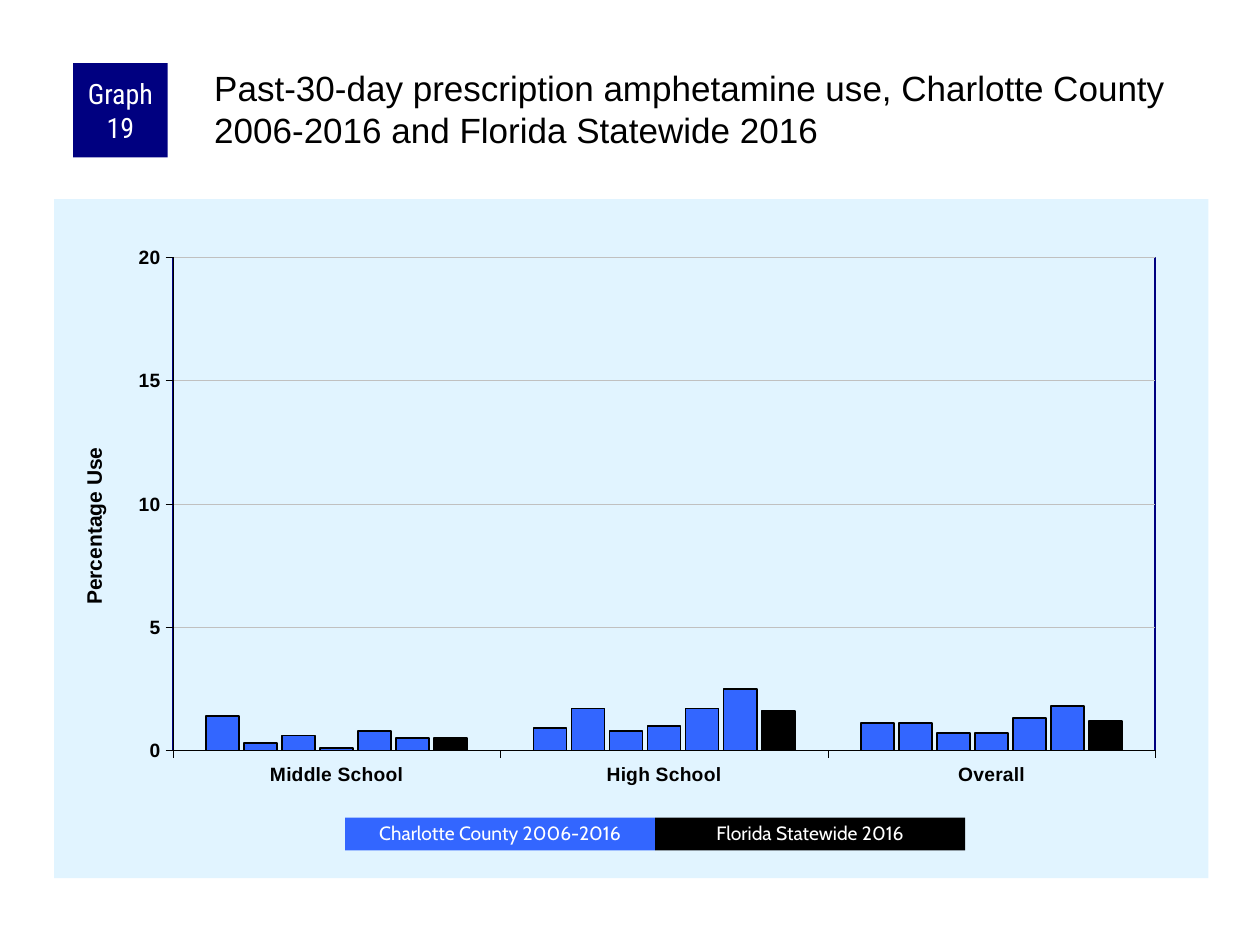
from lxml.etree import SubElement
from pptx import Presentation
from pptx.chart.data import CategoryChartData
from pptx.dml.color import RGBColor
from pptx.enum.chart import XL_CHART_TYPE, XL_TICK_MARK
from pptx.enum.shapes import MSO_SHAPE
from pptx.enum.text import MSO_ANCHOR, PP_ALIGN
from pptx.oxml import parse_xml
from pptx.oxml.ns import nsdecls, qn
from pptx.util import Inches, Pt

BLACK = RGBColor(0x00, 0x00, 0x00)
WHITE = RGBColor(0xFF, 0xFF, 0xFF)
NAVY = RGBColor(0x00, 0x00, 0x80)
BLUE = RGBColor(0x33, 0x66, 0xFF)
PALE = RGBColor(0xE1, 0xF4, 0xFF)
GREY = RGBColor(0xC0, 0xC0, 0xC0)

SCHOOLS = ["Middle School", "High School", "Overall"]
COUNTY_USE = [
    (1.4, 0.9, 1.1),
    (0.3, 1.7, 1.1),
    (0.6, 0.8, 0.7),
    (0.1, 1, 0.7),
    (0.8, 1.7, 1.3),
    (0.5, 2.5, 1.8),
]
STATE_USE = (0.5, 1.6, 1.2)


def style_font(font, name, size, color, bold=False):
    """Set the face, size, colour and weight of a font."""
    font.name = name
    font.size = Pt(size)
    font.color.rgb = color
    font.bold = bold


def style_line(line, color, width):
    """Give a line a solid colour and a width in points."""
    line.color.rgb = color
    line.width = Pt(width)


def add_label(slide, box, text, fill, font_name, size, spacing=1.0):
    """Place a filled rectangle with centred white text."""
    label = slide.shapes.add_shape(MSO_SHAPE.RECTANGLE, *map(Inches, box))
    label.shadow.inherit = False
    label.fill.solid()
    label.fill.fore_color.rgb = fill
    label.line.fill.background()
    frame = label.text_frame
    frame.word_wrap = True
    frame.vertical_anchor = MSO_ANCHOR.MIDDLE
    frame.margin_left = frame.margin_right = Inches(0.05)
    frame.margin_top = frame.margin_bottom = 0
    para = frame.paragraphs[0]
    para.alignment = PP_ALIGN.CENTER
    para.line_spacing = spacing
    span = para.add_run()
    span.text = text
    style_font(span.font, font_name, size, WHITE)


def add_header(slide, left, top, width):
    """Place the graph number and the heading beside it."""
    add_label(slide, (left, top, 0.75, 0.75), "Graph 19", NAVY, "Roboto Condensed", 16)
    indent = 1.09
    heading = slide.shapes.add_textbox(
        Inches(left + indent), Inches(top), Inches(width - indent), Inches(0.83)
    )
    frame = heading.text_frame
    frame.word_wrap = True
    frame.margin_left = frame.margin_top = Inches(0.03)
    frame.margin_right = frame.margin_bottom = 0
    span = frame.paragraphs[0].add_run()
    span.text = (
        "Past-30-day prescription amphetamine use, Charlotte County "
        "2006-2016 and Florida Statewide 2016"
    )
    style_font(span.font, "Arial", 20, BLACK)


def make_layout(**values):
    """Build a manual chart layout from fractions of the chart."""
    layout = parse_xml(f"<c:layout {nsdecls('c')}><c:manualLayout/></c:layout>")
    for name, value in values.items():
        SubElement(layout[0], qn(f"c:{name}")).set("val", str(value))
    return layout


def make_surface(fill, line):
    """Build chart area properties from fill and line markup."""
    return parse_xml(f"<c:spPr {nsdecls('c', 'a')}>{fill}<a:ln{line}</a:ln></c:spPr>")


def style_areas(chart):
    """Fill the chart area and fix the bordered plot area."""
    space = chart.element
    pale = f'<a:solidFill><a:srgbClr val="{PALE}"/></a:solidFill>'
    space.find(qn("c:chart")).addnext(make_surface(pale, "><a:noFill/>"))
    plot_area = space.find(qn("c:chart")).find(qn("c:plotArea"))
    for old in plot_area.findall(qn("c:layout")):
        plot_area.remove(old)
    plot_area.insert(0, make_layout(
        layoutTarget="inner", xMode="edge", yMode="edge", x=0.103, y=0.086, w=0.851, h=0.726
    ))
    border = f' w="12700"><a:solidFill><a:srgbClr val="{NAVY}"/></a:solidFill>'
    plot_area.append(make_surface("<a:noFill/>", border))


def style_axes(chart):
    """Format both axes, the gridlines and the value title."""
    for axis in (chart.category_axis, chart.value_axis):
        axis.major_tick_mark = XL_TICK_MARK.OUTSIDE
        axis.minor_tick_mark = XL_TICK_MARK.NONE
        style_font(axis.tick_labels.font, "Arial", 11, BLACK, True)
        style_line(axis.format.line, BLACK, 0.25)
    axis = chart.value_axis
    axis.minimum_scale, axis.maximum_scale, axis.major_unit = 0, 20, 5
    axis.has_major_gridlines = True
    style_line(axis.major_gridlines.format.line, GREY, 0.25)
    axis.tick_labels.number_format = "0"
    axis.tick_labels.number_format_is_linked = False
    title = axis.axis_title
    span = title.text_frame.paragraphs[0].add_run()
    span.text = "Percentage Use"
    style_font(span.font, "Arial", 12, BLACK, True)
    element = title.format.line and axis.axis_title.text_frame._txBody.getparent().getparent()
    for old in element.findall(qn("c:layout")):
        element.remove(old)
    element.find(qn("c:tx")).addnext(
        make_layout(xMode="edge", yMode="edge", x=0.02, y=0.36)
    )


def add_use_chart(slide, left, top, width, height):
    """Place the column chart with its legend bars below the plot."""
    data = CategoryChartData()
    data.categories = SCHOOLS
    for number, values in enumerate([*COUNTY_USE, STATE_USE], 1):
        data.add_series(f"Series {number}", values)
    chart = slide.shapes.add_chart(
        XL_CHART_TYPE.COLUMN_CLUSTERED, *map(Inches, (left, top, width, height)), data
    ).chart
    chart.has_legend = False
    chart.has_title = False
    style_font(chart.font, "Arial", 8, BLACK)
    plot = chart.plots[0]
    plot.vary_by_categories = False
    plot.gap_width = 200
    plot.overlap = -15
    for series, color in zip(plot.series, [BLUE] * len(COUNTY_USE) + [BLACK]):
        series.format.fill.solid()
        series.format.fill.fore_color.rgb = color
        style_line(series.format.line, BLACK, 1)
    style_axes(chart)
    style_areas(chart)
    entries = [("Charlotte County 2006-2016", BLUE), ("Florida Statewide 2016", BLACK)]
    for index, (text, color) in enumerate(entries):
        box = (left + 2.31 + 2.46 * index, top + 4.91, 2.46, 0.26)
        add_label(slide, box, text, color, "Cabin", 11, 0.9)


def main():
    """Build the slide and save the deck."""
    deck = Presentation()
    deck.slide_width, deck.slide_height = Inches(10), Inches(7.5)
    slide = deck.slides.add_slide(deck.slide_layouts[6])
    add_use_chart(slide, 0.43, 1.58, 9.16, 5.39)
    add_header(slide, 0.58, 0.5, 9.01)
    deck.save("out.pptx")


if __name__ == "__main__":
    main()
